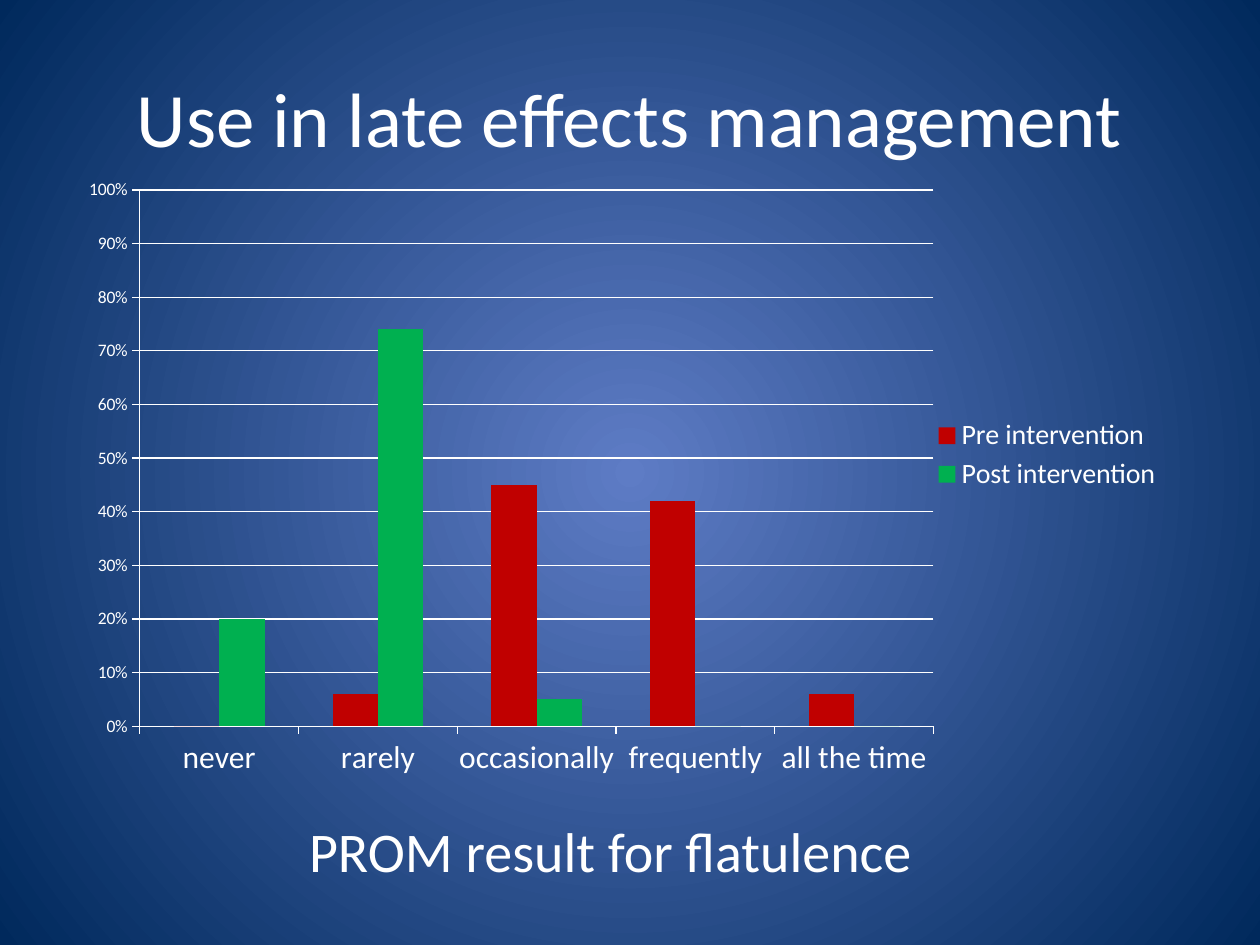
from lxml.etree import SubElement
from pptx import Presentation
from pptx.chart.data import CategoryChartData
from pptx.dml.color import RGBColor
from pptx.enum.chart import XL_CHART_TYPE, XL_LEGEND_POSITION, XL_TICK_MARK
from pptx.enum.text import MSO_ANCHOR, PP_ALIGN
from pptx.oxml.ns import qn
from pptx.util import Pt

WHITE = "FFFFFF"
ANSWERS = ["never", "rarely", "occasionally", "frequently", "all the time"]
RESULTS = [
    ("Pre intervention", [0, 0.06, 0.45, 0.42, 0.06], "C00000"),
    ("Post intervention", [0.2, 0.74, 0.05, 0, 0], "00B050"),
]


def colour(hex_code):
    """Turn a hex string into a colour."""
    return RGBColor.from_string(hex_code)


def style_font(font, size, hex_code=WHITE, name="Calibri"):
    """Set size, colour and typeface of a font."""
    font.size = Pt(size)
    font.name = name
    font.color.rgb = colour(hex_code)


def write(frame, text, size, align=PP_ALIGN.CENTER, anchor=MSO_ANCHOR.TOP):
    """Fill a text frame with one formatted paragraph."""
    frame.word_wrap = True
    frame.vertical_anchor = anchor
    paragraph = frame.paragraphs[0]
    paragraph.alignment = align
    run = paragraph.add_run()
    run.text = text
    style_font(run.font, size)


def paint_background(slide, centre, edge):
    """Give the slide a circular gradient from centre to edge."""
    fill = slide.background.fill
    fill.gradient()
    for stop, hex_code in zip(fill.gradient_stops, (centre, edge)):
        stop.color.rgb = colour(hex_code)
    gradient = slide.element.find(".//" + qn("a:gradFill"))
    linear = gradient.find(qn("a:lin"))
    if linear is not None:
        gradient.remove(linear)
    circle = SubElement(gradient, qn("a:path"), {"path": "circle"})
    SubElement(circle, qn("a:fillToRect"), dict.fromkeys("ltrb", "50000"))


def add_title(slide, text):
    """Place the slide title."""
    title = slide.shapes.title
    title.left, title.top, title.width, title.height = Pt(36), Pt(21.6), Pt(648), Pt(90)
    write(title.text_frame, text, 44, anchor=MSO_ANCHOR.MIDDLE)


def add_caption(slide, text):
    """Add the centred line below the chart."""
    caption = slide.shapes.add_textbox(Pt(8.64), Pt(463), Pt(680.4), Pt(46))
    write(caption.text_frame, text, 32)


def place_part(part, index, x, y, w, h, inner=False):
    """Fix a chart part at fractions of the chart area."""
    for automatic in part.findall(qn("c:layout")):
        part.remove(automatic)
    layout = SubElement(part, qn("c:layout"))
    part.insert(index, layout)
    manual = SubElement(layout, qn("c:manualLayout"))
    settings = [("layoutTarget", "inner")] if inner else []
    settings += [("xMode", "edge"), ("yMode", "edge"), ("x", x), ("y", y), ("w", w), ("h", h)]
    for tag, value in settings:
        SubElement(manual, qn("c:" + tag), {"val": str(value)})


def style_axis(axis, size):
    """Format the labels, line and tick marks of an axis."""
    style_font(axis.tick_labels.font, size)
    axis.major_tick_mark = XL_TICK_MARK.OUTSIDE
    axis.minor_tick_mark = XL_TICK_MARK.NONE
    style_line(axis.format.line)


def style_line(line):
    """Draw a thin white line."""
    line.color.rgb = colour(WHITE)
    line.width = Pt(0.75)


def add_results_chart(slide):
    """Add the column chart of answers before and after intervention."""
    data = CategoryChartData(number_format="0%")
    data.categories = ANSWERS
    for name, shares, _ in RESULTS:
        data.add_series(name, shares)
    chart = slide.shapes.add_chart(
        XL_CHART_TYPE.COLUMN_CLUSTERED, Pt(41), Pt(94.3), Pt(648), Pt(356.4), data
    ).chart
    style_font(chart.font, 10)
    chart.has_title = False

    columns = chart.plots[0]
    columns.gap_width = 150
    columns.overlap = 0
    columns.vary_by_categories = False
    for series, (_, _, hex_code) in zip(columns.series, RESULTS):
        series.format.fill.solid()
        series.format.fill.fore_color.rgb = colour(hex_code)

    style_axis(chart.category_axis, 18)
    shares_axis = chart.value_axis
    style_axis(shares_axis, 10)
    shares_axis.minimum_scale, shares_axis.maximum_scale = 0, 1
    shares_axis.major_unit = 0.1
    shares_axis.tick_labels.number_format = "0%"
    shares_axis.tick_labels.number_format_is_linked = False
    shares_axis.has_major_gridlines = True
    style_line(shares_axis.major_gridlines.format.line)

    chart.has_legend = True
    legend = chart.legend
    legend.position = XL_LEGEND_POSITION.RIGHT
    legend.include_in_layout = False
    style_font(legend.font, 16)
    place_part(chart.element.find(".//" + qn("c:plotArea")), 0, 0.06, 0.04, 0.7, 0.86, inner=True)
    place_part(chart.element.find(".//" + qn("c:legend")), 1, 0.75, 0.4, 0.22, 0.13)


def main():
    """Build and save the slide."""
    deck = Presentation()
    deck.slide_width, deck.slide_height = Pt(720), Pt(540)
    slide = deck.slides.add_slide(deck.slide_layouts[5])
    paint_background(slide, "5E7CC5", "00295C")
    add_title(slide, "Use in late effects management")
    add_caption(slide, "PROM result for flatulence")
    add_results_chart(slide)
    deck.save("out.pptx")


if __name__ == "__main__":
    main()
